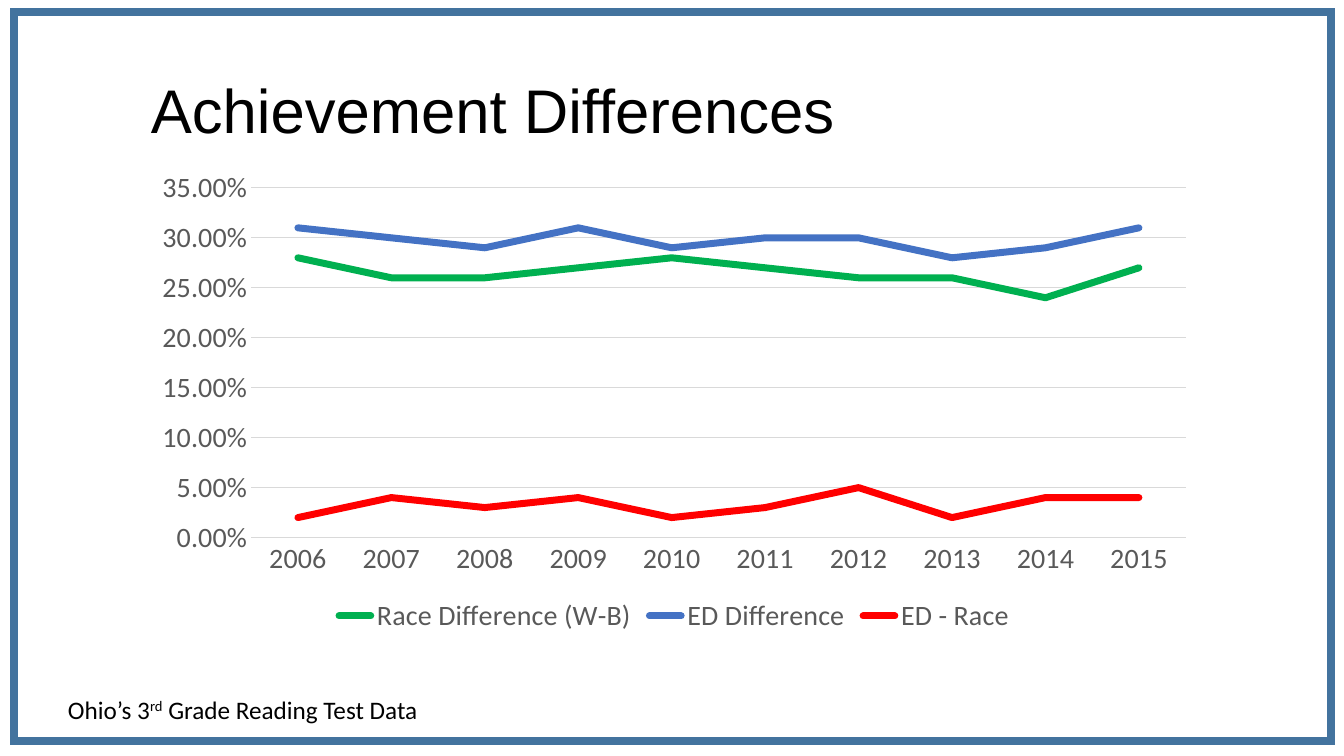
from lxml.etree import SubElement
from pptx import Presentation
from pptx.chart.data import CategoryChartData
from pptx.dml.color import RGBColor
from pptx.enum.chart import XL_CHART_TYPE, XL_LEGEND_POSITION, XL_TICK_MARK
from pptx.enum.shapes import MSO_SHAPE
from pptx.enum.text import MSO_ANCHOR
from pptx.oxml.ns import qn
from pptx.util import Pt

EMU_PER_PX = 914400 / 100.8
YEARS = [str(year) for year in range(2006, 2016)]
DIFFERENCES = [
    ("Race Difference (W-B)", "00B050",
     [0.28, 0.26, 0.26, 0.27, 0.28, 0.27, 0.26, 0.26, 0.24, 0.27]),
    ("ED Difference", "4472C4",
     [0.31, 0.3, 0.29, 0.31, 0.29, 0.3, 0.3, 0.28, 0.29, 0.31]),
    ("ED - Race", "FF0000",
     [0.02, 0.04, 0.03, 0.04, 0.02, 0.03, 0.05, 0.02, 0.04, 0.04]),
]


def px(*lengths):
    """Turn pixel lengths into EMU."""
    return [round(length * EMU_PER_PX) for length in lengths]


def color(hex_string):
    """Turn a hex string into a colour."""
    return RGBColor.from_string(hex_string)


def style_font(font, name, size, hex_string):
    """Set the face, size and colour of a font."""
    font.name = name
    font.size = Pt(size)
    font.color.rgb = color(hex_string)


def style_line(line, hex_string, width):
    """Set the colour and width of a line."""
    line.color.rgb = color(hex_string)
    line.width = Pt(width)


def add_frame(slide, box):
    """Draw the square-cornered border around the slide."""
    frame = slide.shapes.add_shape(MSO_SHAPE.RECTANGLE, *px(*box))
    frame.shadow.inherit = False
    frame.fill.background()
    style_line(frame.line, "43739E", 6)
    SubElement(frame.line._get_or_add_ln(), qn("a:miter"), lim="800000")


def add_title(slide, box):
    """Write the slide title, centred vertically in its box."""
    title = slide.shapes.add_textbox(*px(*box)).text_frame
    title.word_wrap = True
    title.vertical_anchor = MSO_ANCHOR.MIDDLE
    title.text = "Achievement Differences"
    heading = title.paragraphs[0]
    heading.line_spacing = 0.9
    style_font(heading.runs[0].font, "Arial", 44, "000000")


def add_data_note(slide, box):
    """Write the data note with its raised ordinal."""
    note = slide.shapes.add_textbox(*px(*box)).text_frame
    note.word_wrap = False
    sentence = note.paragraphs[0]
    for wording, baseline in (("Ohio’s 3", 0), ("rd", 30000),
                              (" Grade Reading Test Data", 0)):
        part = sentence.add_run()
        part.text = wording
        style_font(part.font, "Calibri", 18, "000000")
        part.font._element.set("baseline", str(baseline))


def add_differences_chart(slide, box):
    """Plot the yearly differences as three lines."""
    chart_data = CategoryChartData(number_format="0.00%")
    chart_data.categories = YEARS
    for name, _, shares in DIFFERENCES:
        chart_data.add_series(name, shares)
    chart = slide.shapes.add_chart(XL_CHART_TYPE.LINE, *px(*box), chart_data).chart
    chart.has_title = False
    style_font(chart.font, "Calibri", 10, "000000")
    chart.plots[0].vary_by_categories = False

    for series, (_, hue, _) in zip(chart.plots[0].series, DIFFERENCES):
        series.smooth = False
        style_line(series.format.line, hue, 5)
        outline = series.format.line._get_or_add_ln()
        outline.set("cap", "rnd")
        SubElement(outline, qn("a:round"))

    for axis in (chart.category_axis, chart.value_axis):
        axis.major_tick_mark = axis.minor_tick_mark = XL_TICK_MARK.NONE
        style_font(axis.tick_labels.font, "Calibri", 20, "595959")
    style_line(chart.category_axis.format.line, "D9D9D9", 0.75)
    percent_axis = chart.value_axis
    percent_axis.minimum_scale = 0
    percent_axis.maximum_scale = 0.35
    percent_axis.major_unit = 0.05
    percent_axis.tick_labels.number_format = "0.00%"
    percent_axis.tick_labels.number_format_is_linked = False
    percent_axis.format.line.fill.background()
    style_line(percent_axis.major_gridlines.format.line, "D9D9D9", 0.75)

    chart.has_legend = True
    chart.legend.position = XL_LEGEND_POSITION.BOTTOM
    chart.legend.include_in_layout = False
    style_font(chart.legend.font, "Calibri", 20, "595959")


def main():
    """Build and save the slide."""
    presentation = Presentation()
    presentation.slide_width, presentation.slide_height = px(1344, 756)
    slide = presentation.slides.add_slide(presentation.slide_layouts[6])
    add_frame(slide, (14, 12, 1317, 729))
    add_title(slide, (141, 41, 1039, 146))
    add_data_note(slide, (58, 689, 376, 40))
    add_differences_chart(slide, (141, 161, 1066, 478))
    presentation.save("out.pptx")


if __name__ == "__main__":
    main()
